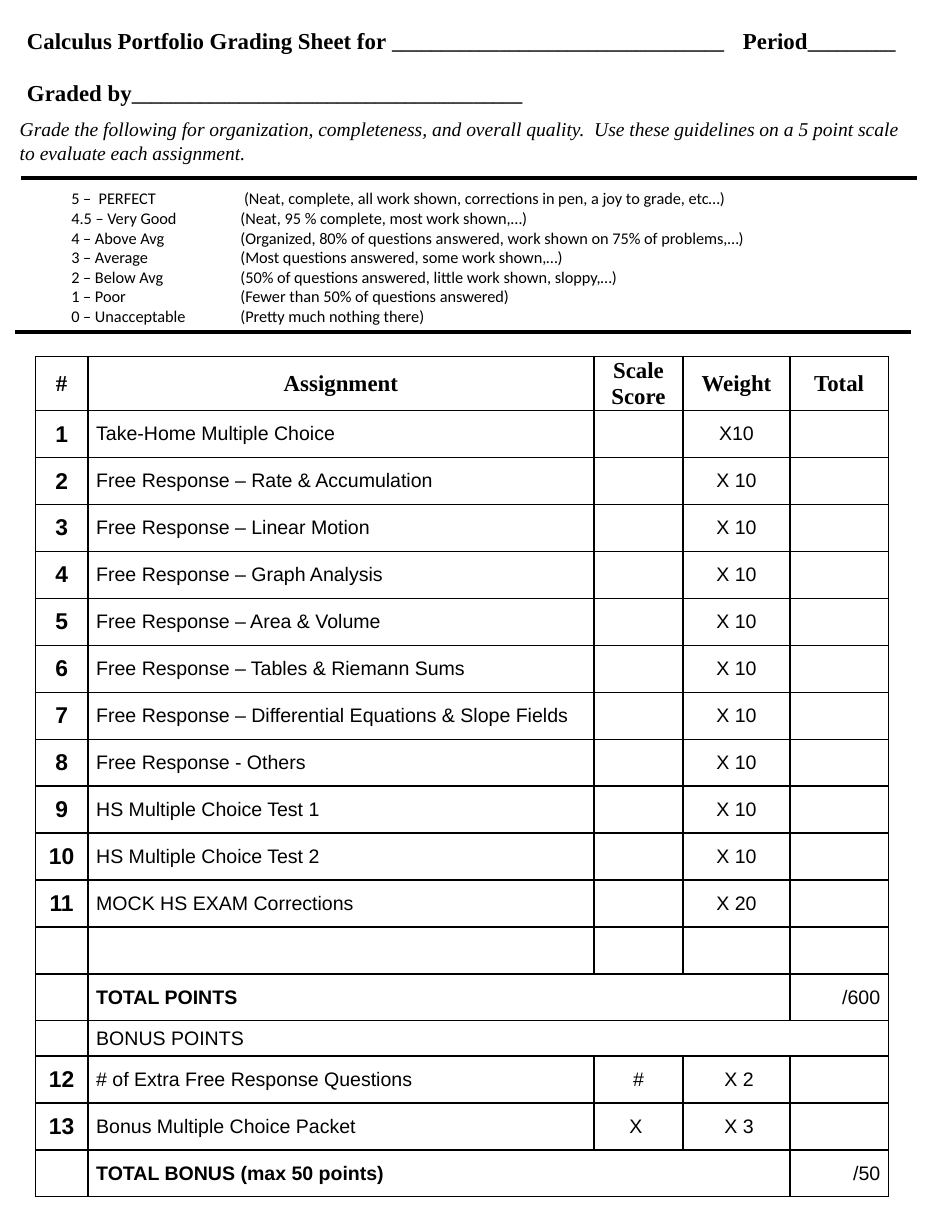
import pptx
import pptx.util
import pptx.dml.color
import pptx.enum.shapes
import pptx.enum.text
import pptx.oxml
import pptx.oxml.ns
from pptx.util import Inches

HUES = {"ink": "000000", "page": "FFFFFF"}
ALIGN = pptx.enum.text.PP_ALIGN
MIDDLE = pptx.enum.text.MSO_ANCHOR.MIDDLE
LEFT, CENTER, RIGHT = ALIGN.LEFT, ALIGN.CENTER, ALIGN.RIGHT
SERIF, SANS, LIST = "Times New Roman", "Arial", "Calibri"

SCALE = [
    ("5 –  PERFECT", " (Neat, complete, all work shown, corrections in pen, a joy to grade, etc…)"),
    ("4.5 – Very Good", "(Neat, 95 % complete, most work shown,…)"),
    ("4 – Above Avg", "(Organized, 80% of questions answered, work shown on 75% of problems,…)"),
    ("3 – Average", "(Most questions answered, some work shown,…)"),
    ("2 – Below Avg", "(50% of questions answered, little work shown, sloppy,…)"),
    ("1 – Poor", "(Fewer than 50% of questions answered)"),
    ("0 – Unacceptable", "(Pretty much nothing there)"),
]
HEADS = ["#", "Assignment", "Scale Score", "Weight", "Total"]
TASKS = [
    ("Take-Home Multiple Choice", "X10"),
    ("Free Response – Rate & Accumulation", "X 10"),
    ("Free Response – Linear Motion", "X 10"),
    ("Free Response – Graph Analysis", "X 10"),
    ("Free Response – Area & Volume", "X 10"),
    ("Free Response – Tables & Riemann Sums", "X 10"),
    ("Free Response – Differential Equations & Slope Fields", "X 10"),
    ("Free Response - Others", "X 10"),
    ("HS Multiple Choice Test 1", "X 10"),
    ("HS Multiple Choice Test 2", "X 10"),
    ("MOCK HS EXAM Corrections", "X 20"),
]
ROWS = [HEADS]
ROWS += [[str(num), task, "", weight, ""] for num, (task, weight) in enumerate(TASKS, 1)]
ROWS += [
    [""] * 5,
    ["", "TOTAL POINTS", "", "", "/600"],
    ["", "BONUS POINTS", "", "", ""],
    ["12", "# of Extra Free Response Questions", "#", " X 2", ""],
    ["13", "Bonus Multiple Choice Packet", "X ", " X 3", ""],
    ["", "TOTAL BONUS (max 50 points)", "", "", "/50"],
]
SPANS = {13: 3, 14: 4, 17: 3}
WIDTHS = [0.45, 4.31, 0.76, 0.91, 0.84]
ALIGNS = [CENTER, LEFT, CENTER, CENTER, RIGHT]


def put(par, text, size=12, face=SERIF, bold=False, italic=False, hue="ink"):
    """Add a run of formatted text to a paragraph."""
    run = par.add_run()
    run.text = text
    font = run.font
    font.size, font.name = pptx.util.Pt(size), face
    font.bold, font.italic = bold, italic
    font.color.rgb = pptx.dml.color.RGBColor.from_string(HUES[hue])


class Sheet:
    """Hold the deck's style and the current slide."""

    def __init__(self, deck):
        self.slide = deck.slides.add_slide(deck.slide_layouts[5])
        self.shapes = self.slide.shapes

    def place(self, shape, x, y, wide, high):
        shape.left, shape.top = Inches(x), Inches(y)
        shape.width, shape.height = Inches(wide), Inches(high)
        frame = shape.text_frame
        frame.word_wrap = True
        frame.auto_size = pptx.enum.text.MSO_AUTO_SIZE.NONE
        frame.vertical_anchor = pptx.enum.text.MSO_ANCHOR.TOP
        frame.paragraphs[0].alignment = LEFT
        return frame

    def title(self, *box):
        return self.place(self.shapes.title, *box)

    def text(self, *box):
        return self.place(self.shapes.add_textbox(0, 0, 0, 0), *box)

    def rule(self, x, y, wide):
        kind = pptx.enum.shapes.MSO_CONNECTOR.STRAIGHT
        line = self.shapes.add_connector(kind, Inches(x), Inches(y), Inches(x + wide), Inches(y))
        line.line.width = pptx.util.Pt(2.25)
        line.line.color.rgb = pptx.dml.color.RGBColor.from_string(HUES["ink"])
        line._element.spPr.append(pptx.oxml.parse_xml(f'<a:effectLst {pptx.oxml.ns.nsdecls("a")}/>'))

    def edge(self, cell):
        props = cell._tc.get_or_add_tcPr()
        for side in "LRTB":
            props.append(pptx.oxml.parse_xml(
                f'<a:ln{side} {pptx.oxml.ns.nsdecls("a")} w="12700"><a:solidFill>'
                f'<a:srgbClr val="{HUES["ink"]}"/></a:solidFill></a:ln{side}>'))

    def cell(self, cell, text, align, **style):
        self.edge(cell)
        cell.fill.solid()
        cell.fill.fore_color.rgb = pptx.dml.color.RGBColor.from_string(HUES["page"])
        cell.vertical_anchor = MIDDLE
        cell.margin_left = cell.margin_right = Inches(0.07)
        cell.margin_top = cell.margin_bottom = 0
        par = cell.text_frame.paragraphs[0]
        par.alignment = align
        put(par, text, **style)

    def table(self, x, y, rows, widths, highs):
        grid = self.shapes.add_table(len(rows), len(widths), Inches(x), Inches(y),
                                     Inches(sum(widths)), Inches(sum(highs))).table
        grid.first_row = grid.horz_banding = False
        for col, wide in zip(grid.columns, widths):
            col.width = Inches(wide)
        for row, high in zip(grid.rows, highs):
            row.height = Inches(high)
        for r, row in enumerate(rows):
            for c, text in enumerate(row):
                head, total = r == 0, text.startswith("TOTAL")
                self.cell(grid.cell(r, c), text, CENTER if head else ALIGNS[c],
                          size=14 if head or c == 0 else 12,
                          face=SERIF if head else SANS, bold=head or c == 0 or total)
        for r, last in SPANS.items():
            grid.cell(r, 1).merge(grid.cell(r, last))


def main():
    """Build the grading sheet."""
    deck = pptx.Presentation()
    deck.slide_width, deck.slide_height = Inches(8), Inches(10.5)
    sheet = Sheet(deck)

    frame = sheet.title(0.13, 0.18, 7.76, 0.77)
    par = frame.paragraphs[0]
    par._p.get_or_add_pPr().append(pptx.oxml.parse_xml(
        f'<a:tabLst {pptx.oxml.ns.nsdecls("a")}><a:tab pos="{Inches(6.1)}" algn="l"/></a:tabLst>'))
    put(par, "Calculus Portfolio Grading Sheet for ", size=14, bold=True)
    put(par, "_" * 34 + "\t", bold=True)
    put(par, "Period", size=14, bold=True)
    put(par, "_" * 9, bold=True)
    par = frame.add_paragraph()
    par.alignment, par.space_before = LEFT, pptx.util.Pt(15)
    put(par, "Graded by", size=14, bold=True)
    put(par, "_" * 40, bold=True)

    highs = [0.3 if r == 14 else 0.4 for r in range(len(ROWS))]
    highs[0] = 0.46
    sheet.table(0.3, 3.04, ROWS, WIDTHS, highs)

    frame = sheet.text(0.07, 0.95, 7.86, 1.88)
    put(frame.paragraphs[0], "Grade the following for organization, completeness, and overall quality.  "
        "Use these guidelines on a 5 point scale to evaluate each assignment.", italic=True)
    for i, (grade, note) in enumerate(SCALE):
        par = frame.add_paragraph()
        props = par._p.get_or_add_pPr()
        props.set("marL", str(Inches(1.88)))
        props.set("indent", str(Inches(-1.44)))
        if i == 0:
            par.space_before = pptx.util.Pt(15)
        put(par, f"{grade}\t{note}", size=10, face=LIST)

    sheet.rule(0.18, 1.52, 7.63)
    sheet.rule(0.13, 2.83, 7.63)
    deck.save("out.pptx")


if __name__ == "__main__":
    main()
